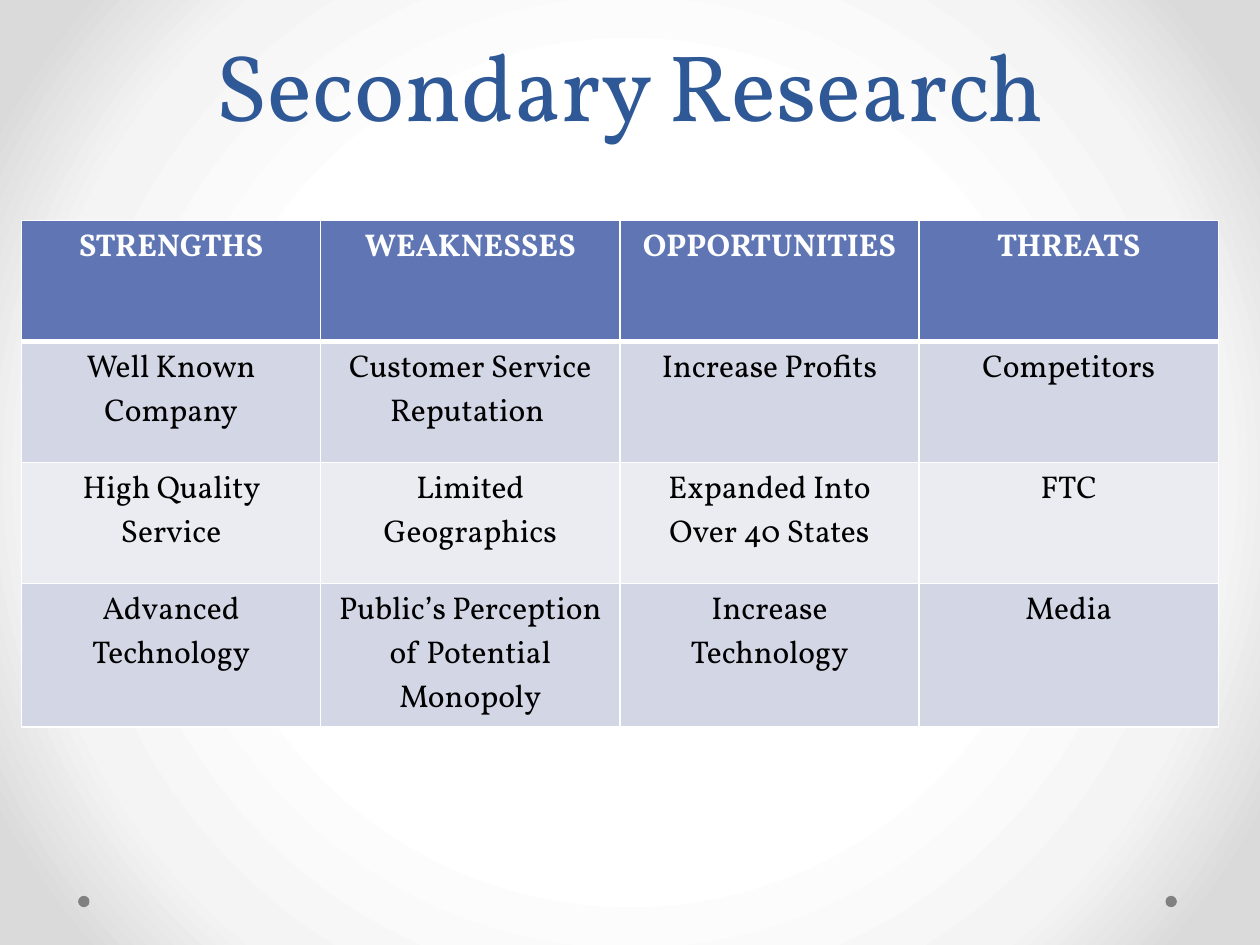
import pptx
import pptx.dml.color
import pptx.enum.shapes
import pptx.enum.text
import pptx.oxml
import pptx.oxml.ns
import pptx.util
from pptx.dml.color import RGBColor
from pptx.util import Inches

FONT = "Vollkorn"
TITLE_BLUE = RGBColor(0x2F, 0x58, 0x97)
HEADER_BLUE = RGBColor(0x60, 0x76, 0xB4)
BAND_DARK = RGBColor(0xD2, 0xD6, 0xE5)
BAND_LIGHT = RGBColor(0xEA, 0xEC, 0xF2)
WHITE = RGBColor(0xFF, 0xFF, 0xFF)
BLACK = RGBColor(0, 0, 0)
DOT_GRAY = RGBColor(0x80, 0x80, 0x80)
BACKGROUND_STOPS = [
    (50, WHITE),
    (76, RGBColor(0xF4, 0xF4, 0xF4)),
    (92, RGBColor(0xDA, 0xDA, 0xDA)),
]

SWOT = [
    ["STRENGTHS", "WEAKNESSES", "OPPORTUNITIES", "THREATS"],
    ["Well Known Company", "Customer Service Reputation ", "Increase Profits", "Competitors"],
    ["High Quality Service", "Limited Geographics", "Expanded Into Over 40 States", "FTC"],
    ["Advanced Technology", "Public’s Perception of Potential Monopoly",
     "Increase Technology", "Media"],
]
ROW_HEIGHT = Inches(0.96)


def set_background(s):
    """Radial gradient, white in the middle and gray at the corners."""
    s.background.fill.gradient()
    stops = "".join(
        f'<a:gs pos="{pos * 1000}"><a:srgbClr val="{color}"/></a:gs>'
        for pos, color in BACKGROUND_STOPS
    )
    radial = pptx.oxml.parse_xml(
        f'<a:gradFill {pptx.oxml.ns.nsdecls("a")} rotWithShape="1">'
        f"<a:gsLst>{stops}</a:gsLst>"
        '<a:path path="circle">'
        '<a:fillToRect l="50000" t="50000" r="50000" b="50000"/>'
        "</a:path></a:gradFill>"
    )
    old = s.element.find(".//" + pptx.oxml.ns.qn("a:gradFill"))
    old.getparent().replace(old, radial)


def add_dots(s, lefts, top, size):
    for left in lefts:
        dot = s.shapes.add_shape(
            pptx.enum.shapes.MSO_SHAPE.OVAL, left, top, size, size)
        dot.shadow.inherit = False
        dot.fill.solid()
        dot.fill.fore_color.rgb = DOT_GRAY
        dot.line.fill.background()


def format_paragraph(p, size, color, bold=False):
    p.alignment = pptx.enum.text.PP_ALIGN.CENTER
    for r in p.runs:
        r.font.name = FONT
        r.font.size = pptx.util.Pt(size)
        r.font.bold = bold
        r.font.color.rgb = color


def add_title(s, left, top, width, height):
    tf = s.shapes.add_textbox(left, top, width, height).text_frame
    tf.word_wrap = True
    tf.vertical_anchor = pptx.enum.text.MSO_ANCHOR.BOTTOM
    tf.text = "Secondary Research"
    p = tf.paragraphs[0]
    p.line_spacing = pptx.util.Pt(58)
    format_paragraph(p, 54, TITLE_BLUE)


def set_borders(cell, **widths):
    """Draw white borders; widths are points by side: L, R, T, B."""
    tcPr = cell._tc.get_or_add_tcPr()
    for i, (side, width) in enumerate(widths.items()):
        tcPr.insert(i, pptx.oxml.parse_xml(
            f'<a:ln{side} {pptx.oxml.ns.nsdecls("a")} w="{pptx.util.Pt(width)}">'
            f'<a:solidFill><a:srgbClr val="{WHITE}"/></a:solidFill></a:ln{side}>'
        ))


def add_swot_table(s, left, top, width, height):
    table = s.shapes.add_table(
        len(SWOT), len(SWOT[0]), left, top, width, height).table
    # The last row takes the remaining height, enough for three lines of text
    *upper_rows, last_row = table.rows
    for row in upper_rows:
        row.height = ROW_HEIGHT
    last_row.height = height - ROW_HEIGHT * len(upper_rows)

    for i, texts in enumerate(SWOT):
        header = i == 0
        band = BAND_DARK if i % 2 else BAND_LIGHT
        for j, text in enumerate(texts):
            cell = table.cell(i, j)
            cell.text = text
            format_paragraph(cell.text_frame.paragraphs[0], 18,
                             WHITE if header else BLACK, header)
            cell.fill.solid()
            cell.fill.fore_color.rgb = HEADER_BLUE if header else band
            # The rule under the header is thicker than the other borders
            set_borders(cell, L=1, R=1, T=3 if i == 1 else 1, B=3 if header else 1)


def main():
    prs = pptx.Presentation()
    prs.slide_width, prs.slide_height = Inches(10), Inches(7.5)
    s = prs.slides.add_slide(prs.slide_layouts[6])
    set_background(s)
    add_dots(s, [Inches(9.25), Inches(0.62)], Inches(7.11), Inches(0.09))
    add_title(s, Inches(0.5), Inches(0.08), Inches(9), Inches(1.08))
    add_swot_table(s, Inches(0.17), Inches(1.75), Inches(9.5), Inches(4.02))
    prs.save("out.pptx")


if __name__ == "__main__":
    main()
